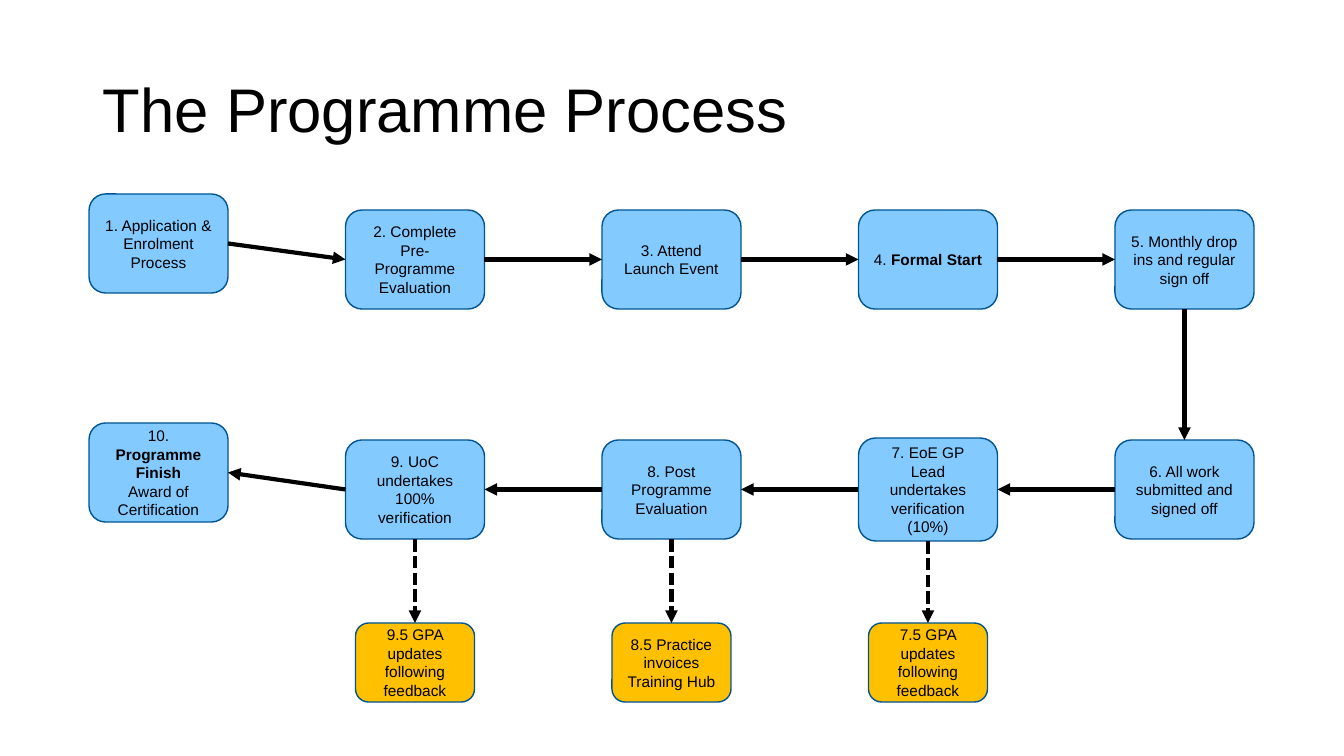
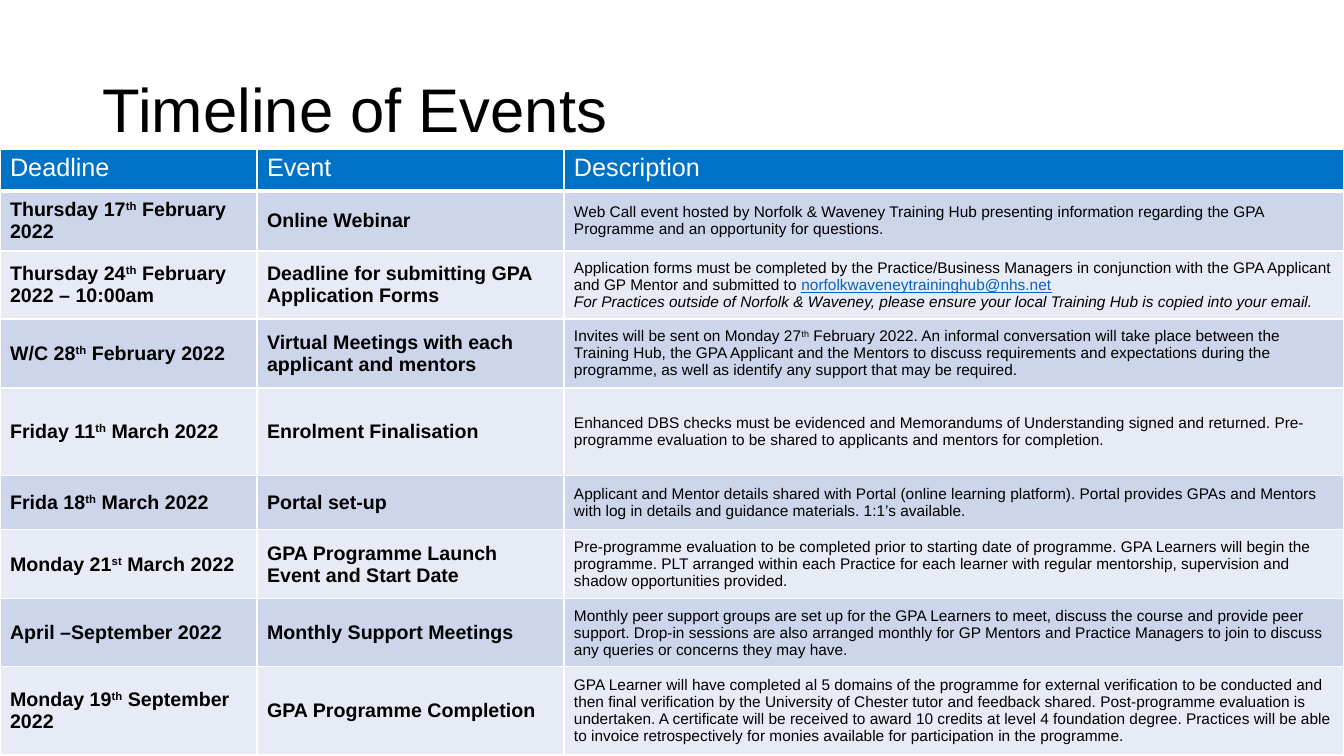
from lxml.etree import SubElement
from pptx import Presentation
from pptx.dml.color import RGBColor
from pptx.enum.dml import MSO_LINE
from pptx.enum.shapes import MSO_CONNECTOR, MSO_SHAPE
from pptx.enum.text import MSO_ANCHOR, PP_ALIGN
from pptx.oxml.ns import qn
from pptx.util import Emu, Pt

# Shared look
FONT = "Arial"
PAGE = (1344, 756)
TITLE_AREA = (93, 40, 877, 146)
COLORS = {
    "black": "000000", "white": "FFFFFF", "link": "0563C1",
    "step": "82CAFF", "side": "FFC000", "outline": "005492",
    "header": "0072C6", "odd": "CCD5EA", "even": "E7EBF5",
}
STYLES = {
    "plain": {},
    "bold": {"bold": True},
    "italic": {"italic": True},
    "link": {"underline": True, "color": "link"},
    "raised": {"baseline": "30000"},
}

# Slide 1: number: (column, top, height, paragraphs)
FIRST_LEFT, LAST_LEFT, COLUMNS = 89, 1115, 5
STEP_WIDTH, STEP_HEIGHT = 139, 99
SIDE_WIDTH, SIDE_HEIGHT, SIDE_TOP = 119, 79, 623
UPPER, LOWER = 210, 440
STEPS = {
    1: (0, 194, STEP_HEIGHT, ["1. Application & Enrolment Process"]),
    2: (1, UPPER, STEP_HEIGHT, ["2. Complete Pre-Programme Evaluation"]),
    3: (2, UPPER, STEP_HEIGHT, ["3. Attend Launch Event"]),
    4: (3, UPPER, STEP_HEIGHT, [["4. ", ("Formal Start", "bold")]]),
    5: (4, UPPER, STEP_HEIGHT, ["5. Monthly drop ins and regular sign off"]),
    6: (4, LOWER, STEP_HEIGHT, ["6. All work submitted and signed off"]),
    7: (3, 438, 103, ["7. EoE GP Lead undertakes verification (10%)"]),
    8: (2, LOWER, STEP_HEIGHT, ["8. Post Programme Evaluation"]),
    9: (1, LOWER, STEP_HEIGHT, ["9. UoC undertakes 100% verification"]),
    10: (0, 423, STEP_HEIGHT, [["10. ", ("Programme Finish", "bold")], "Award of Certification"]),
}
SIDE_STEPS = {
    7: "7.5 GPA updates following feedback",
    8: "8.5 Practice invoices Training Hub",
    9: "9.5 GPA updates following feedback",
}
TOP, LEFT, BOTTOM, RIGHT = range(4)  # connection sites of a box

# Slide 2
TABLE_TOP = 149
COLUMN_WIDTHS = (257, 307, 780)
ROW_HEIGHTS = (42, 60, 68, 69, 88, 54, 69, 68, 88)
HEADINGS = ("Deadline", "Event", "Description")
TH = ("th", "raised")
EVENTS = [
    (["Thursday 17", TH, " February 2022"], "Online Webinar",
     ["Web Call event hosted by Norfolk & Waveney Training Hub presenting information regarding "
      "the GPA Programme and an opportunity for questions."]),
    (["Thursday 24", TH, " February 2022 – 10:00am"],
     "Deadline for submitting GPA Application Forms",
     [["Application forms must be completed by the Practice/Business Managers in conjunction with "
       "the GPA Applicant and GP Mentor and submitted to ",
       ("norfolkwaveneytraininghub@nhs.net", "link")],
      [("For Practices outside of Norfolk & Waveney, please ensure your local Training Hub is "
        "copied into your email.", "italic")]]),
    (["W/C 28", TH, " February 2022"], "Virtual Meetings with each applicant and mentors",
     [["Invites will be sent on Monday 27", TH,
       " February 2022. An informal conversation will take place between the Training Hub, the GPA "
       "Applicant and the Mentors to discuss requirements and expectations during the programme, "
       "as well as identify any support that may be required."]]),
    (["Friday 11", TH, " March 2022"], "Enrolment Finalisation",
     ["Enhanced DBS checks must be evidenced and Memorandums of Understanding signed and returned. "
      "Pre-programme evaluation to be shared to applicants and mentors for completion."]),
    (["Frida 18", TH, " March 2022"], "Portal set-up",
     ["Applicant and Mentor details shared with Portal (online learning platform). Portal provides "
      "GPAs and Mentors with log in details and guidance materials. 1:1’s available."]),
    (["Monday 21", ("st", "raised"), " March 2022"], "GPA Programme Launch Event and Start Date",
     ["Pre-programme evaluation to be completed prior to starting date of programme. GPA Learners "
      "will begin the programme. PLT arranged within each Practice for each learner with regular "
      "mentorship, supervision and shadow opportunities provided."]),
    ("April –September 2022", "Monthly Support Meetings",
     ["Monthly peer support groups are set up for the GPA Learners to meet, discuss the course and "
      "provide peer support. Drop-in sessions are also arranged monthly for GP Mentors and Practice "
      "Managers to join to discuss any queries or concerns they may have."]),
    (["Monday 19", TH, " September 2022"], "GPA Programme Completion",
     ["GPA Learner will have completed al 5 domains of the programme for external verification to "
      "be conducted and then final verification by the University of Chester tutor and feedback "
      "shared. Post-programme evaluation is undertaken. A certificate will be received to award 10 "
      "credits at level 4 foundation degree. Practices will be able to invoice retrospectively for "
      "monies available for participation in the programme."]),
]


def px(length):
    return Emu(round(length * 914400 / 100.8))


def rgb(name):
    return RGBColor.from_string(COLORS[name])


def write(frame, paragraphs, align=PP_ALIGN.LEFT, spacing=None, **base):
    """Fill a text frame; a paragraph is a string or a list of spans."""
    for index, spans in enumerate(paragraphs):
        para = frame.paragraphs[0] if index == 0 else frame.add_paragraph()
        para.alignment = align
        para.line_spacing = spacing
        for item in [spans] if isinstance(spans, str) else spans:
            text, style = (item, "plain") if isinstance(item, str) else item
            span = para.add_run()
            span.text = text
            formats = {"name": FONT, "color": "black", **base, **STYLES[style]}
            span.font.color.rgb = rgb(formats.pop("color"))
            if "baseline" in formats:
                span.font._element.set("baseline", formats.pop("baseline"))
            for key, value in formats.items():
                setattr(span.font, key, value)


def add_page(deck, title):
    page = deck.slides.add_slide(deck.slide_layouts[6])
    frame = page.shapes.add_textbox(*map(px, TITLE_AREA)).text_frame
    frame.word_wrap = True
    frame.vertical_anchor = MSO_ANCHOR.MIDDLE
    write(frame, [title], spacing=0.9, size=Pt(44))
    return page


def add_box(page, area, fill, paragraphs):
    box = page.shapes.add_shape(MSO_SHAPE.ROUNDED_RECTANGLE, *map(px, area))
    box.shadow.inherit = False
    box.fill.solid()
    box.fill.fore_color.rgb = rgb(fill)
    box.line.color.rgb = rgb("outline")
    box.line.width = Pt(1)
    box.text_frame.word_wrap = True
    box.text_frame.vertical_anchor = MSO_ANCHOR.MIDDLE
    write(box.text_frame, paragraphs, PP_ALIGN.CENTER, size=Pt(11))
    return box


def add_arrow(page, start, start_site, end, end_site, dash=None):
    arrow = page.shapes.add_connector(MSO_CONNECTOR.STRAIGHT, 0, 0, 0, 0)
    arrow.begin_connect(start, start_site)
    arrow.end_connect(end, end_site)
    arrow.line.color.rgb = rgb("black")
    arrow.line.width = Pt(3)
    if dash:
        arrow.line.dash_style = dash
    SubElement(arrow.line._get_or_add_ln(), qn("a:tailEnd"), type="triangle")
    SubElement(arrow._element.spPr, qn("a:effectLst"))


def column_left(column):
    return FIRST_LEFT + (LAST_LEFT - FIRST_LEFT) * column / (COLUMNS - 1)


def build_process(deck):
    page = add_page(deck, "The Programme Process")
    boxes = {
        number: add_box(page, (column_left(column), top, STEP_WIDTH, height), "step", paragraphs)
        for number, (column, top, height, paragraphs) in STEPS.items()
    }
    # Main route: right along the top, down, left along the bottom
    for number in range(1, len(STEPS)):
        sites = (RIGHT, LEFT) if number < 5 else (BOTTOM, TOP) if number == 5 else (LEFT, RIGHT)
        add_arrow(page, boxes[number], sites[0], boxes[number + 1], sites[1])
    # Side steps centred below their main step
    for number, text in SIDE_STEPS.items():
        left = column_left(STEPS[number][0]) + (STEP_WIDTH - SIDE_WIDTH) / 2
        side = add_box(page, (left, SIDE_TOP, SIDE_WIDTH, SIDE_HEIGHT), "side", [text])
        add_arrow(page, boxes[number], BOTTOM, side, TOP, MSO_LINE.SQUARE_DOT)


def style_cell(cell, fill, bottom_width):
    properties = cell._tc.get_or_add_tcPr()
    for edge, width in (("lnL", 1), ("lnR", 1), ("lnT", 1), ("lnB", bottom_width)):
        line = SubElement(properties, qn(f"a:{edge}"), w=str(Pt(width)))
        SubElement(SubElement(line, qn("a:solidFill")), qn("a:srgbClr"), val=COLORS["white"])
    cell.fill.solid()
    cell.fill.fore_color.rgb = rgb(fill)


def build_timeline(deck):
    page = add_page(deck, "Timeline of Events")
    area = (0, TABLE_TOP, sum(COLUMN_WIDTHS), sum(ROW_HEIGHTS))
    table = page.shapes.add_table(len(ROW_HEIGHTS), len(COLUMN_WIDTHS), *map(px, area)).table
    for column, width in zip(table.columns, COLUMN_WIDTHS):
        column.width = px(width)
    for row, height in zip(table.rows, ROW_HEIGHTS):
        row.height = px(height)
    # Header row
    for cell, heading in zip(table.rows[0].cells, HEADINGS):
        style_cell(cell, "header", 3)
        write(cell.text_frame, [heading], size=Pt(18), color="white", bold=False)
    # Event rows in alternating bands
    for index, (deadline, event, description) in enumerate(EVENTS, 1):
        contents = ([deadline], [event], description)
        for column, paragraphs in enumerate(contents):
            cell = table.cell(index, column)
            style_cell(cell, "odd" if index % 2 else "even", 1)
            cell.vertical_anchor = MSO_ANCHOR.MIDDLE
            label = column < 2
            write(cell.text_frame, paragraphs, size=Pt(14 if label else 11), bold=label)


def main():
    deck = Presentation()
    deck.slide_width, deck.slide_height = map(px, PAGE)
    build_process(deck)
    build_timeline(deck)
    deck.save("out.pptx")


if __name__ == "__main__":
    main()
